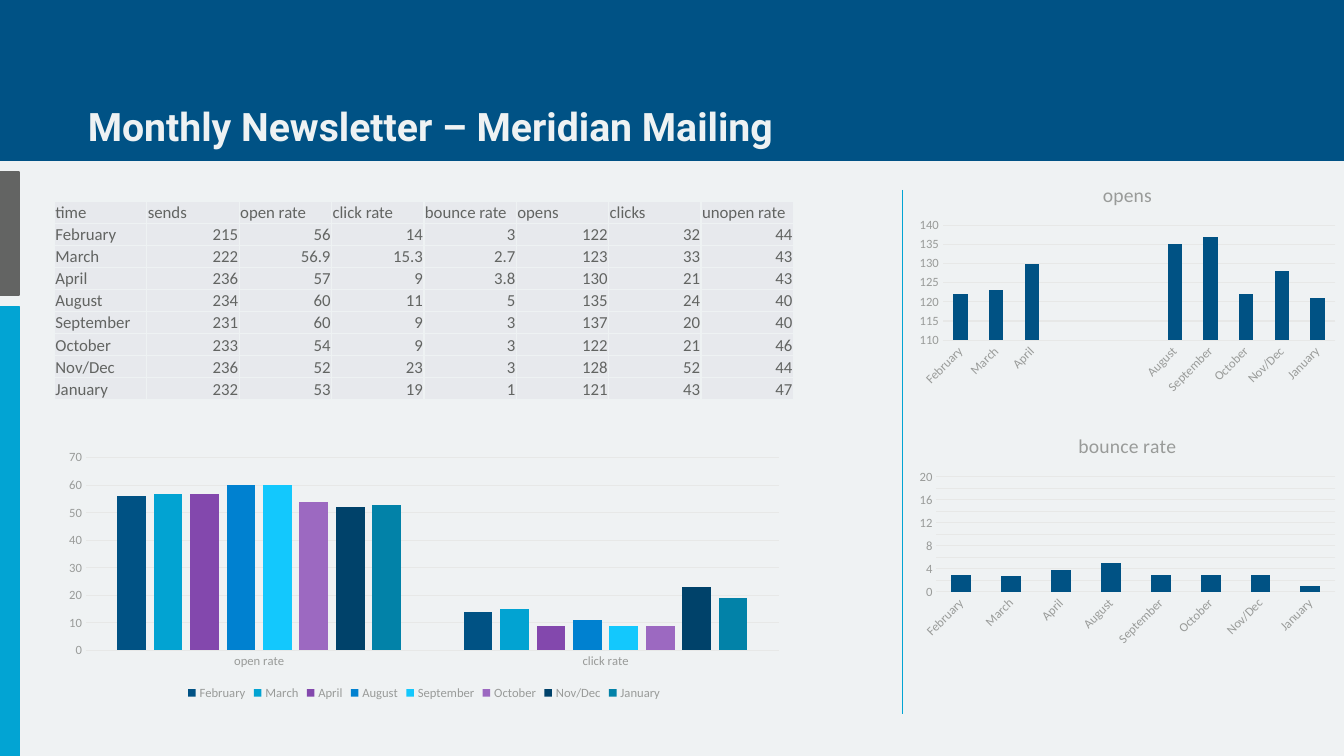
from dataclasses import dataclass

from lxml.etree import SubElement
from pptx import Presentation
from pptx.chart.data import CategoryChartData as ChartData
from pptx.dml.color import RGBColor as RGB
from pptx.enum.chart import XL_CHART_TYPE as ChartType
from pptx.enum.chart import XL_LEGEND_POSITION as LegendPosition
from pptx.enum.chart import XL_TICK_MARK as TickMark
from pptx.enum.shapes import MSO_CONNECTOR as Connector
from pptx.enum.shapes import MSO_SHAPE as Shape
from pptx.enum.text import MSO_ANCHOR as Anchor
from pptx.enum.text import MSO_AUTO_SIZE as AutoSize
from pptx.enum.text import PP_ALIGN as Align
from pptx.oxml.ns import qn
from pptx.util import Inches, Pt


@dataclass(frozen=True)
class Theme:
    paper: str = "EFF2F3"
    light: str = "EEF2F3"
    navy: str = "005285"
    grey: str = "636463"
    cyan: str = "02A4D3"
    text: str = "626462"
    muted: str = "999B99"
    grid: str = "E7E8E7"
    cell: str = "E7E9ED"
    series: tuple = ("005284", "02A3D2", "8348AD", "0081D0",
                     "13C8FD", "9C69C1", "00426A", "0282A8")
    heading_font: str = "Roboto"
    body_font: str = "Calibri"
    heading_size: int = 28
    chart_title_size: int = 14
    table_size: int = 12
    chart_size: int = 10
    label_size: int = 9
    hairline: float = 0.75
    border: float = 1


class Report:
    """Slide builder; every place is given in percent of the slide's size."""

    def __init__(self, deck, theme):
        self.deck, self.theme = deck, theme
        self.slide = deck.slides.add_slide(deck.slide_layouts[5])
        self.shapes = self.slide.shapes
        self.paint(self.slide.background.fill, theme.paper)

    def place(self, left, top, width, height):
        across, down = self.deck.slide_width / 100, self.deck.slide_height / 100
        return [round(v) for v in (left * across, top * down,
                                   width * across, height * down)]

    def paint(self, fill, color):
        fill.solid()
        fill.fore_color.rgb = RGB.from_string(color)

    def stroke(self, line, color, width):
        self.paint(line.fill, color)
        line.width = Pt(width)

    def style(self, font, size, color, name=None, bold=False):
        font.name, font.size, font.bold = name or self.theme.body_font, Pt(size), bold
        font.color.rgb = RGB.from_string(color)

    def bar(self, area, color):
        bar = self.shapes.add_shape(Shape.RECTANGLE, *self.place(*area))
        bar.shadow.inherit = False
        self.paint(bar.fill, color)
        self.stroke(bar.line, color, self.theme.border)

    def divider(self, x, top, bottom):
        left, start, _, end = self.place(x, top, 0, bottom)
        rule = self.shapes.add_connector(Connector.STRAIGHT, left, start, left, end)
        self.stroke(rule.line, self.theme.cyan, self.theme.hairline)
        SubElement(rule._element.spPr, qn("a:effectLst"))

    def title(self, area, wording):
        heading = self.shapes.title
        self.shapes._spTree.append(heading._element)  # in front of the banner
        heading.left, heading.top, heading.width, heading.height = self.place(*area)
        frame = heading.text_frame
        frame.word_wrap, frame.auto_size = True, AutoSize.NONE
        frame.vertical_anchor = Anchor.BOTTOM
        line = frame.paragraphs[0]
        line.alignment, line.line_spacing = Align.LEFT, 0.9
        run = line.add_run()
        run.text = wording
        self.style(run.font, self.theme.heading_size, self.theme.light,
                   self.theme.heading_font, bold=True)

    def table(self, area, rows):
        left, top, width, height = self.place(*area)
        grid = self.shapes.add_table(len(rows), len(rows[0]),
                                     left, top, width, height).table
        grid.first_row = grid.horz_banding = False
        for column in grid.columns:
            column.width = round(width / len(rows[0]))
        for r, values in enumerate(rows):
            grid.rows[r].height = round(height / len(rows))
            for c, value in enumerate(values):
                self.cell(grid.cell(r, c), value)

    def cell(self, cell, value):
        cell.margin_left = cell.margin_right = cell.margin_top = Inches(0.01)
        cell.margin_bottom = 0
        cell.vertical_anchor = Anchor.BOTTOM
        self.paint(cell.fill, self.theme.cell)
        properties = cell._tc.get_or_add_tcPr()
        for i, side in enumerate(("lnL", "lnR", "lnT", "lnB")):
            edge = SubElement(properties, qn(f"a:{side}"), w=str(Pt(self.theme.border)))
            SubElement(SubElement(edge, qn("a:solidFill")), qn("a:srgbClr"),
                       val=self.theme.light)
            properties.insert(i, edge)  # borders come before the fill
        line = cell.text_frame.paragraphs[0]
        line.alignment = Align.LEFT if isinstance(value, str) else Align.RIGHT
        run = line.add_run()
        run.text = str(value)
        self.style(run.font, self.theme.table_size, self.theme.text)

    def columns(self, area, categories, series, scale, gap, overlap=0,
                title=None, legend=False, tilt=0):
        theme = self.theme
        data = ChartData()
        data.categories = categories
        for name, values in series:
            data.add_series(name, values)
        chart = self.shapes.add_chart(ChartType.COLUMN_CLUSTERED,
                                      *self.place(*area), data).chart
        self.style(chart.font, theme.chart_size, theme.text)
        chart.has_title = title is not None
        if title:
            run = chart.chart_title.text_frame.paragraphs[0].add_run()
            run.text = title
            self.style(run.font, theme.chart_title_size, theme.muted)
            chart.chart_title.include_in_layout = False
        chart.has_legend = legend
        if legend:
            chart.legend.position = LegendPosition.BOTTOM
            chart.legend.include_in_layout = False
            self.style(chart.legend.font, theme.label_size, theme.muted)

        plot = chart.plots[0]
        plot.gap_width, plot.overlap, plot.vary_by_categories = gap, overlap, False
        for bars, color in zip(plot.series, theme.series):
            self.paint(bars.format.fill, color)
            bars.invert_if_negative = False

        months, amounts = chart.category_axis, chart.value_axis
        for axis in (months, amounts):
            axis.major_tick_mark = axis.minor_tick_mark = TickMark.NONE
            self.style(axis.tick_labels.font, theme.label_size, theme.muted)
        self.stroke(months.format.line, theme.grid, theme.hairline)
        if tilt:
            months._element.find(qn("c:txPr")).find(qn("a:bodyPr")).set(
                "rot", str(tilt * 60000))
        amounts.format.line.fill.background()
        amounts.has_major_gridlines = True
        self.stroke(amounts.major_gridlines.format.line, theme.grid, theme.hairline)
        amounts.minimum_scale, amounts.maximum_scale, amounts.major_unit = scale


HEADER = ["time", "sends", "open rate", "click rate", "bounce rate",
          "opens", "clicks", "unopen rate"]
MONTHS = [
    ["February", 215, 56, 14, 3, 122, 32, 44],
    ["March", 222, 56.9, 15.3, 2.7, 123, 33, 43],
    ["April", 236, 57, 9, 3.8, 130, 21, 43],
    ["August", 234, 60, 11, 5, 135, 24, 40],
    ["September", 231, 60, 9, 3, 137, 20, 40],
    ["October", 233, 54, 9, 3, 122, 21, 46],
    ["Nov/Dec", 236, 52, 23, 3, 128, 52, 44],
    ["January", 232, 53, 19, 1, 121, 43, 47],
]


def main():
    deck = Presentation()
    deck.slide_width, deck.slide_height = Inches(13.33), Inches(7.5)
    theme = Theme()
    report = Report(deck, theme)
    names, _, open_rates, click_rates, bounces, opens, *_ = map(list, zip(*MONTHS))

    # Banner, side bars and divider
    report.bar((0, 0, 100, 21.2), theme.navy)
    report.bar((0, 22.75, 1.43, 16.3), theme.grey)
    report.bar((0, 40.53, 1.43, 59.47), theme.cyan)
    report.divider(67.17, 25.13, 94.4)
    report.title((5.78, 4.67, 86.27, 15.87), "Monthly Newsletter – Meridian Mailing")

    # Monthly figures
    report.table((4.05, 26.6, 55, 26.27), [HEADER] + MONTHS)

    # Opens, with a gap for the three months without a newsletter
    pause = 3
    report.columns((67.78, 22.13, 32.22, 30.67),
                   names[:3] + [""] * pause + names[3:],
                   [("opens", opens[:3] + [None] * pause + opens[3:])],
                   (110, 140, 5), gap=150, title="opens", tilt=-45)

    # Open and click rates by month, in whole numbers
    rates = [(round(opened), round(clicked))
             for opened, clicked in zip(open_rates, click_rates)]
    report.columns((4.05, 58.9, 55, 34.27), ["open rate", "click rate"],
                   list(zip(names, rates)),
                   (0, 70, 10), gap=219, overlap=-27, legend=True)

    # Bounce rate
    report.columns((67.78, 55.43, 32.22, 30.67), names, [("bounce rate", bounces)],
                   (0, 20, 2), gap=150, title="bounce rate", tilt=-45)

    deck.save("out.pptx")


if __name__ == "__main__":
    main()
